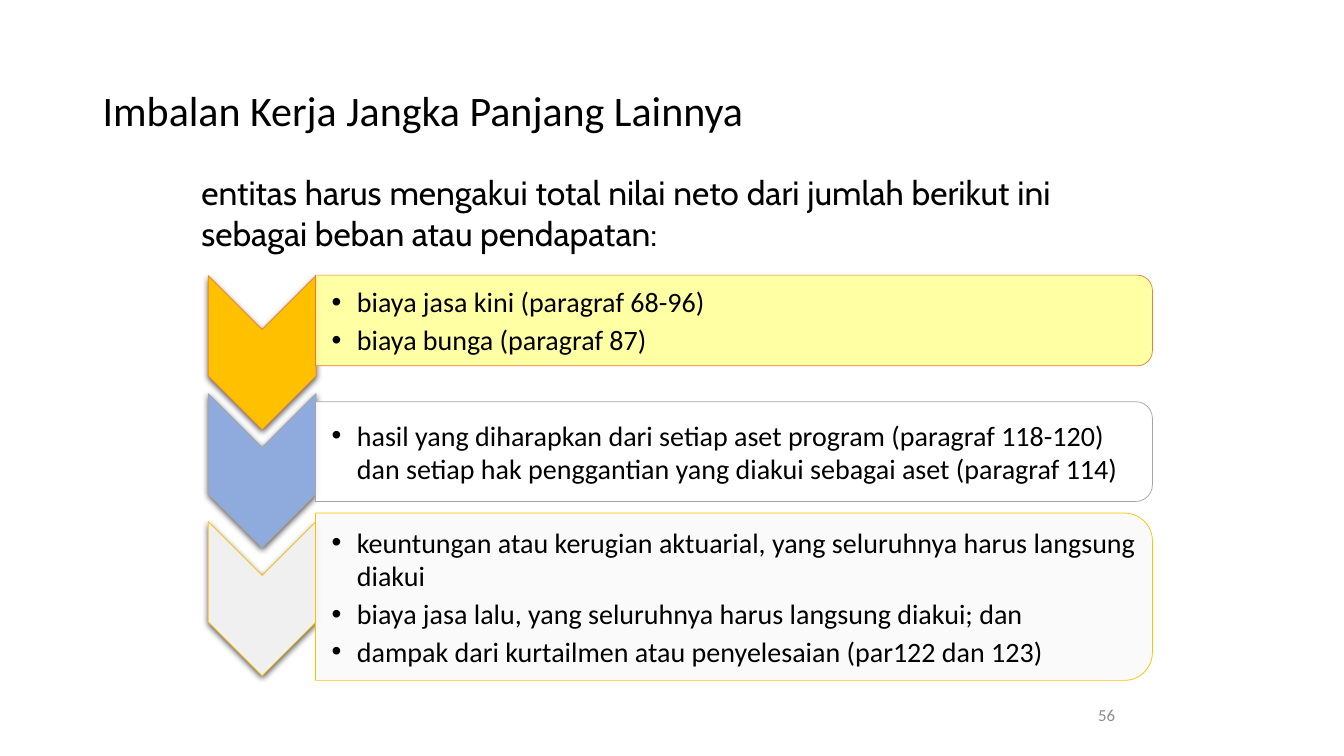
"""Builds the slide on other long-term employee benefits."""
from lxml import etree
from pptx import Presentation
from pptx.dml.color import RGBColor
from pptx.enum.shapes import MSO_SHAPE as Shape
from pptx.enum.text import MSO_ANCHOR as Anchor, PP_ALIGN as Align
from pptx.oxml import parse_xml
from pptx.oxml.ns import nsdecls, qn
from pptx.util import Inches, Pt

TITLE = "Imbalan Kerja Jangka Panjang Lainnya"
INTRO = ("entitas harus mengakui total nilai neto dari jumlah berikut ini "
         "sebagai beban atau pendapatan:")
PAGE = "56"
STEPS = [
    dict(chevron="FFC000", bar="FFFF99", line="ED7D31",
         chevron_mid=3.5, bar_mid=3.18, bar_height=0.9,
         bullets=["biaya jasa kini (paragraf 68-96)",
                  "biaya bunga (paragraf 87)"]),
    dict(chevron="8FAADC", bar="FFFFFF", line="A5A5A5",
         chevron_mid=4.67, bar_mid=4.48, bar_height=0.99,
         bullets=["hasil yang diharapkan dari setiap aset program (paragraf 118-120) "
                  "dan setiap hak penggantian yang diakui sebagai aset (paragraf 114)"]),
    dict(chevron="F1F0F0", bar="FAFAFA", line="FFC000",
         chevron_mid=5.94, bar_mid=5.92, bar_height=1.66,
         bullets=["keuntungan atau kerugian aktuarial, yang seluruhnya harus langsung diakui",
                  "biaya jasa lalu, yang seluruhnya harus langsung diakui; dan",
                  "dampak dari kurtailmen atau penyelesaian (par122 dan 123)"]),
]
THEME = dict(text="000000", muted="8C8C8C", body="Calibri", intro="Cabin",
             title_size=30, intro_size=24, bullet_size=20, page_size=12, line=0.5)
CHEVRON_MID_X, CHEVRON_LENGTH, CHEVRON_BREADTH = 2.6, 1.53, 1.07
BAR_LEFT, BAR_WIDTH = 3.13, 8.3
SHADOW = (f'<a:effectLst {nsdecls("a")}><a:outerShdw blurRad="{Pt(4.5)}" dist="{Pt(1.5)}" '
          'dir="5400000" rotWithShape="0"><a:srgbClr val="000000"><a:alpha val="63000"/>'
          '</a:srgbClr></a:outerShdw></a:effectLst>')


def add_text(slide, box, lines, size, font=THEME["body"], color=THEME["text"],
             anchor=Anchor.MIDDLE, align=Align.LEFT):
    """Adds a wrapped text box and returns its text frame."""
    tf = slide.shapes.add_textbox(*map(Inches, box)).text_frame
    tf.word_wrap = True
    tf.vertical_anchor = anchor
    tf.text = "\n".join(lines)
    for p in tf.paragraphs:
        p.alignment = align
        f = p.runs[0].font
        f.name, f.size = font, Pt(size)
        f.color.rgb = RGBColor.from_string(color)
    return tf


def add_turned(slide, kind, mid_x, mid_y, width, height, fill, line):
    """Adds a shape turned a quarter clockwise; width and height are before turning."""
    sp = slide.shapes.add_shape(kind, Inches(mid_x - width / 2), Inches(mid_y - height / 2),
                                Inches(width), Inches(height))
    sp.rotation = 90
    sp.shadow.inherit = False
    sp.fill.solid()
    sp.fill.fore_color.rgb = RGBColor.from_string(fill)
    sp.line.color.rgb = RGBColor.from_string(line)
    sp.line.width = Pt(THEME["line"])
    return sp


def add_bullets(slide, box, bullets):
    """Adds the bulleted text of one bar."""
    tf = add_text(slide, box, bullets, THEME["bullet_size"])
    tf.margin_left = Inches(0.16)
    tf.margin_top = tf.margin_right = tf.margin_bottom = Inches(0.01)
    for p in tf.paragraphs:
        p.space_after = Pt(3)
        pPr = p._p.get_or_add_pPr()
        pPr.set("marL", str(Inches(0.25)))
        pPr.set("indent", str(-Inches(0.25)))
        etree.SubElement(pPr, qn("a:buFont"), typeface="Arial")
        etree.SubElement(pPr, qn("a:buChar"), char="•")


def add_step(slide, step):
    """Adds one chevron with its bar and bullets."""
    chevron = add_turned(slide, Shape.CHEVRON, CHEVRON_MID_X, step["chevron_mid"],
                         CHEVRON_LENGTH, CHEVRON_BREADTH, step["chevron"], step["line"])
    spPr = chevron._element.spPr
    spPr.replace(spPr.find(qn("a:effectLst")), parse_xml(SHADOW))

    height = step["bar_height"]
    bar = add_turned(slide, Shape.ROUND_2_SAME_RECTANGLE, BAR_LEFT + BAR_WIDTH / 2,
                     step["bar_mid"], height, BAR_WIDTH, step["bar"], step["line"])
    color = bar._element.spPr.find(qn("a:solidFill")).find(qn("a:srgbClr"))
    etree.SubElement(color, qn("a:alpha"), val="90000")
    add_bullets(slide, (BAR_LEFT, step["bar_mid"] - height / 2, BAR_WIDTH - 0.05, height),
                step["bullets"])


def main():
    """Builds and saves the slide."""
    prs = Presentation()
    prs.slide_width, prs.slide_height = Inches(13.33), Inches(7.5)
    s = prs.slides.add_slide(prs.slide_layouts[6])
    title = add_text(s, (0.92, 0.4, 11.5, 1.45), [TITLE], THEME["title_size"])
    title.paragraphs[0].line_spacing = 0.9
    add_text(s, (8.83, 6.83, 2.33, 0.52), [PAGE], THEME["page_size"],
             color=THEME["muted"], align=Align.RIGHT)
    add_text(s, (1.9, 1.66, 8.62, 0.91), [INTRO], THEME["intro_size"],
             font=THEME["intro"], anchor=Anchor.TOP, align=Align.JUSTIFY)
    for step in STEPS:
        add_step(s, step)
    prs.save("out.pptx")


if __name__ == "__main__":
    main()
